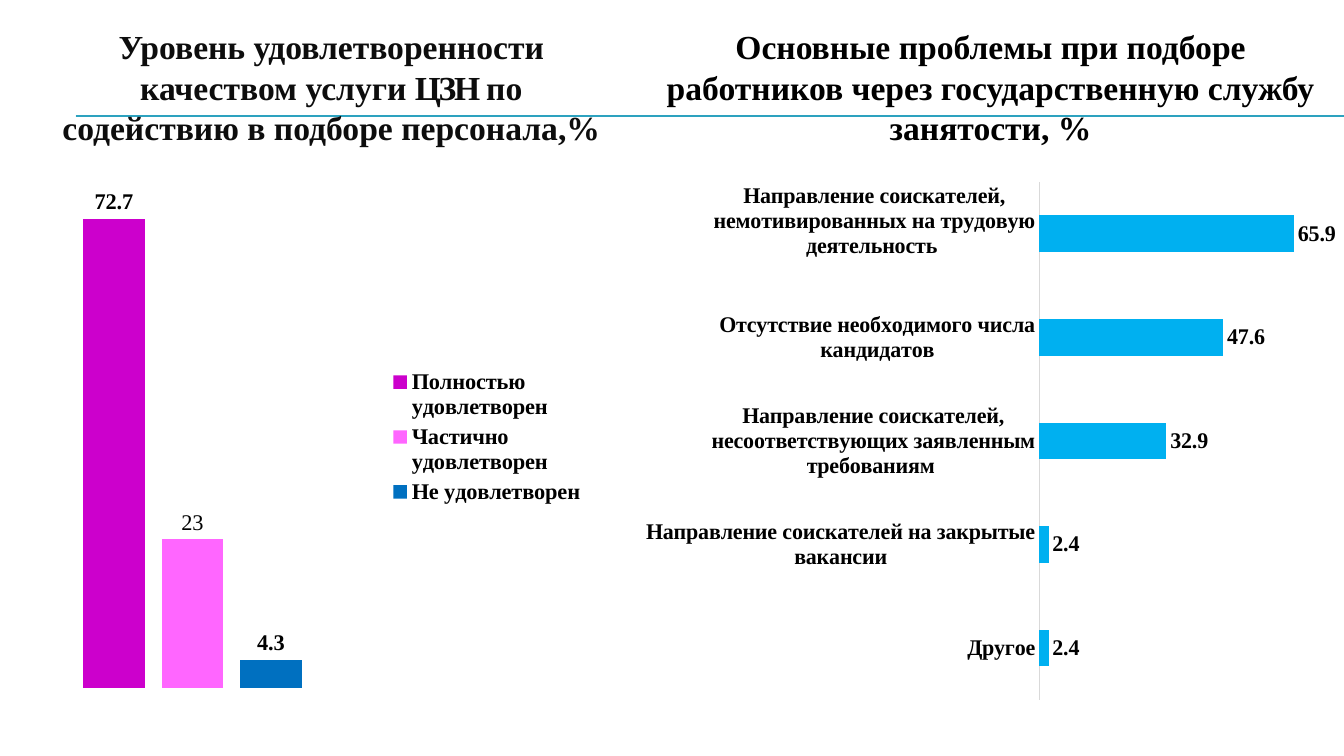
from dataclasses import dataclass

from lxml.etree import SubElement
from pptx import Presentation
from pptx.chart.chart import Chart
from pptx.chart.data import CategoryChartData
from pptx.chart.series import BarSeries
from pptx.dml.color import RGBColor
from pptx.enum.chart import XL_CHART_TYPE, XL_LABEL_POSITION, XL_LEGEND_POSITION, XL_TICK_MARK
from pptx.enum.shapes import MSO_CONNECTOR
from pptx.enum.text import MSO_ANCHOR, MSO_AUTO_SIZE, PP_ALIGN
from pptx.oxml.ns import qn
from pptx.shapes.base import BaseShape
from pptx.slide import Slide
from pptx.text.text import Font
from pptx.util import Inches, Pt

SLIDE_WIDTH = Inches(13.33)
SLIDE_HEIGHT = Inches(7.5)
SERIF = "Times New Roman"
COLORS = {
    "rule": "2DA2BF",
    "black": "000000",
    "ink": "0D0D0D",
    "full": "CC00CC",
    "partial": "FF66FF",
    "none": "0070C0",
    "problem": "00B0F0",
    "axis": "D9D9D9",
}


@dataclass(frozen=True)
class Region:
    """Position and size in percent of the slide."""

    left: float
    top: float
    width: float
    height: float

    def box(self) -> tuple[int, int, int, int]:
        return (
            across(self.left),
            down(self.top),
            across(self.width),
            down(self.height),
        )


@dataclass(frozen=True)
class TextRun:
    text: str
    spacing: int = 0


@dataclass(frozen=True)
class Heading:
    region: Region
    color: str
    runs: tuple[TextRun, ...]


@dataclass(frozen=True)
class Series:
    name: str
    values: tuple[float, ...]
    color: str


@dataclass(frozen=True)
class BarChart:
    region: Region
    kind: XL_CHART_TYPE
    categories: tuple[str, ...]
    series: tuple[Series, ...]
    gap: int
    overlap: int = 0


RULE_LEFT = 5.63
RULE_TOPS = (15.33, 15.47)

PROBLEMS_HEADING = Heading(
    Region(47.41, 2.8, 52.59, 17.47),
    "black",
    (TextRun("Основные проблемы при подборе работников через государственную службу занятости, %"),),
)
SATISFACTION_HEADING = Heading(
    Region(3.38, 2.8, 42.54, 17.47),
    "ink",
    (
        TextRun("Уровень удовлетворенности качеством услуги "),
        TextRun("ЦЗН ", -170),
        TextRun("по содействию в подборе персонала,%"),
    ),
)
SATISFACTION_CHART = BarChart(
    Region(0, 21.6, 44.34, 72.4),
    XL_CHART_TYPE.COLUMN_CLUSTERED,
    ("1",),
    (
        Series("Полностью удовлетворен ", (72.7,), "full"),
        Series("Частично удовлетворен", (23,), "partial"),
        Series("Не удовлетворен", (4.3,), "none"),
    ),
    gap=219,
    overlap=-27,
)
PROBLEMS_CHART = BarChart(
    Region(47.04, 22.67, 52.36, 71.33),
    XL_CHART_TYPE.BAR_CLUSTERED,
    (
        "Направление соискателей, немотивированных на трудовую деятельность \n",
        "Отсутствие необходимого числа кандидатов",
        "Направление соискателей, несоответствующих заявленным требованиям ",
        "Направление соискателей на закрытые вакансии",
        "Другое",
    ),
    (Series("Series 1", (65.9, 47.6, 32.9, 2.4, 2.4), "problem"),),
    gap=182,
)


def across(percent: float) -> int:
    return round(SLIDE_WIDTH * percent / 100)


def down(percent: float) -> int:
    return round(SLIDE_HEIGHT * percent / 100)


def rgb(name: str) -> RGBColor:
    return RGBColor.from_string(COLORS[name])


def set_font(font: Font, size: int, color: str = "black", bold: bool = True, name: str = SERIF) -> None:
    font.name = name
    font.size = Pt(size)
    font.bold = bold
    font.color.rgb = rgb(color)


def add_rule(slide: Slide, top: float) -> None:
    rule = slide.shapes.add_connector(
        MSO_CONNECTOR.STRAIGHT, across(RULE_LEFT), down(top), SLIDE_WIDTH, down(top)
    )
    rule.line.color.rgb = rgb("rule")
    rule.line.width = Pt(0.75)
    SubElement(rule.element.spPr, qn("a:effectLst"))


def write_heading(shape: BaseShape, heading: Heading) -> None:
    shape.left, shape.top, shape.width, shape.height = heading.region.box()
    frame = shape.text_frame
    frame.word_wrap = True
    frame.auto_size = MSO_AUTO_SIZE.SHAPE_TO_FIT_TEXT
    frame.vertical_anchor = MSO_ANCHOR.TOP
    paragraph = frame.paragraphs[0]
    paragraph.alignment = PP_ALIGN.CENTER
    set_font(paragraph.font, 24, heading.color)
    for part in heading.runs:
        run = paragraph.add_run()
        run.text = part.text
        if part.spacing:
            run.font._element.set("spc", str(part.spacing))


def format_series(series: BarSeries, color: str) -> None:
    series.format.fill.solid()
    series.format.fill.fore_color.rgb = rgb(color)
    series.invert_if_negative = False
    labels = series.data_labels
    labels.show_value = True
    labels.number_format = "0.0"
    labels.number_format_is_linked = False
    labels.position = XL_LABEL_POSITION.OUTSIDE_END
    set_font(labels.font, 16)


def add_bar_chart(slide: Slide, content: BarChart) -> Chart:
    data = CategoryChartData(number_format="0.0")
    data.categories = content.categories
    for item in content.series:
        data.add_series(item.name, item.values)
    chart = slide.shapes.add_chart(content.kind, *content.region.box(), data).chart
    set_font(chart.font, 10, bold=False, name="Roboto")
    chart.has_title = False
    chart.has_legend = False
    chart.value_axis.visible = False
    chart.value_axis.has_major_gridlines = False
    plot = chart.plots[0]
    plot.vary_by_categories = False
    plot.gap_width = content.gap
    plot.overlap = content.overlap
    for series, item in zip(plot.series, content.series):
        format_series(series, item.color)
    return chart


def finish_satisfaction_chart(chart: Chart) -> None:
    chart.category_axis.visible = False
    chart.value_axis.minimum_scale = 0
    chart.value_axis.maximum_scale = 80
    chart.has_legend = True
    chart.legend.position = XL_LEGEND_POSITION.RIGHT
    chart.legend.include_in_layout = False
    set_font(chart.legend.font, 16)

    label = chart.plots[0].series[1].points[0].data_label
    paragraph = label.text_frame.paragraphs[0]
    run = paragraph.add_run()
    run.text = "23"
    set_font(run.font, 16, bold=False)
    label.position = XL_LABEL_POSITION.OUTSIDE_END

    plot_area = chart._chartSpace.chart.plotArea
    layout = plot_area.find(qn("c:layout"))
    if layout is None:
        layout = SubElement(plot_area, qn("c:layout"))
        plot_area.insert(0, layout)
    manual = SubElement(layout, qn("c:manualLayout"))
    settings = {
        "layoutTarget": "inner", "xMode": "edge", "yMode": "edge",
        "x": "0.026", "y": "0.016", "w": "0.594", "h": "0.942",
    }
    for tag, value in settings.items():
        SubElement(manual, qn(f"c:{tag}")).set("val", value)


def finish_problems_chart(chart: Chart) -> None:
    axis = chart.category_axis
    axis.reverse_order = True
    axis.major_tick_mark = XL_TICK_MARK.NONE
    axis.format.line.color.rgb = rgb("axis")
    axis.format.line.width = Pt(0.75)
    set_font(axis.tick_labels.font, 16)


def main() -> None:
    presentation = Presentation()
    presentation.slide_width = SLIDE_WIDTH
    presentation.slide_height = SLIDE_HEIGHT
    slide = presentation.slides.add_slide(presentation.slide_layouts[5])
    for top in RULE_TOPS:
        add_rule(slide, top)
    write_heading(slide.shapes.add_textbox(0, 0, 0, 0), PROBLEMS_HEADING)
    title = slide.shapes.title
    write_heading(title, SATISFACTION_HEADING)
    title.element.getparent().append(title.element)
    finish_satisfaction_chart(add_bar_chart(slide, SATISFACTION_CHART))
    finish_problems_chart(add_bar_chart(slide, PROBLEMS_CHART))
    presentation.save("out.pptx")


if __name__ == "__main__":
    main()
